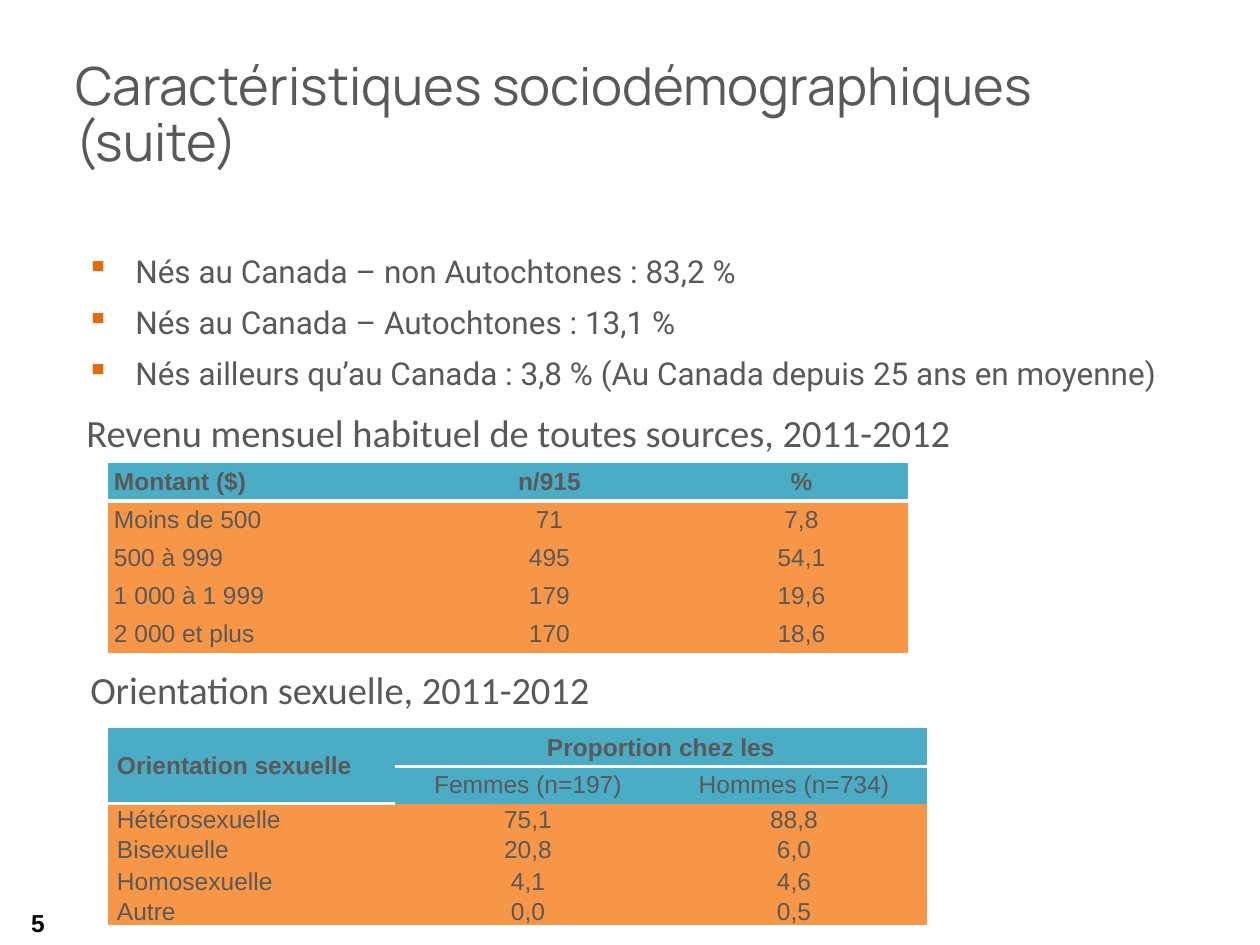
"""Build the slide on sociodemographic traits, with two tables."""
import pptx
import pptx.dml.color
import pptx.enum.text
import pptx.oxml
import pptx.oxml.ns
import pptx.util

PX = 914400 // 126
HUES = {"text": "595959", "num": "000000", "mark": "E46C0A",
        "head": "4BACC6", "body": "F79646", "line": "FFFFFF"}
ALIGN = pptx.enum.text.PP_ALIGN
ANCHOR = pptx.enum.text.MSO_ANCHOR
NO_GRID = "{2D5ABB26-0587-4C30-8999-92F81FD0307C}"

BIRTH = ["Nés au Canada – non Autochtones : 83,2 %",
         "Nés au Canada – Autochtones : 13,1 %",
         "Nés ailleurs qu’au Canada : 3,8 % (Au Canada depuis 25 ans en moyenne)"]
TEXTS = [
    {"box": (0, 898, 57, 50), "lines": ["5"], "anchor": ANCHOR.MIDDLE,
     "font": {"name": "Arial", "size": 14, "bold": True}, "hue": "num",
     "para": {"alignment": ALIGN.RIGHT}},
    {"box": (63, 38, 1134, 157), "anchor": ANCHOR.MIDDLE,
     "lines": ["Caractéristiques sociodémographiques (suite)"],
     "font": {"name": "Manrope", "size": 30}, "para": {"line_spacing": 0.9}},
    {"box": (74, 253, 1138, 160), "lines": BIRTH, "bullet": "▪",
     "font": {"name": "Roboto", "size": 18},
     "para": {"line_spacing": 0.8, "space_after": pptx.util.Pt(12)}},
    {"box": (74, 403, 900, 59), "wrap": False,
     "lines": ["Revenu mensuel habituel de toutes sources, 2011-2012"],
     "font": {"name": "Calibri", "size": 22}},
    {"box": (78, 660, 530, 59), "wrap": False,
     "lines": ["Orientation sexuelle, 2011-2012"],
     "font": {"name": "Calibri", "size": 22}},
]
TABLES = [
    {"at": (108, 463), "cols": [296, 291, 213], "rows": [38] * 5,
     "heads": 1, "inset": (6, 4), "anchor": ANCHOR.MIDDLE,
     "spans": [], "rules": [(0, 0), (0, 1), (0, 2)],
     "cells": [["Montant ($)", "n/915", "%"],
               ["Moins de 500", "71", "7,8"],
               ["500 à 999", "495", "54,1"],
               ["1 000 à 1 999", "179", "19,6"],
               ["2 000 et plus", "170", "18,6"]]},
    {"at": (108, 728), "cols": [287, 266, 266],
     "rows": [39, 37, 30, 30, 32, 29],
     "heads": 2, "inset": (9, 0), "anchor": ANCHOR.BOTTOM,
     "spans": [((0, 0), (1, 0)), ((0, 1), (0, 2))],
     "rules": [(0, 0), (1, 0), (0, 1), (0, 2)],
     "cells": [["Orientation sexuelle", "Proportion chez les", ""],
               ["", "Femmes (n=197)", "Hommes (n=734)"],
               ["Hétérosexuelle", "75,1", "88,8"],
               ["Bisexuelle", "20,8", "6,0"],
               ["Homosexuelle", "4,1", "4,6"],
               ["Autre", "0,0", "0,5"]]},
]


def color(key):
    return pptx.dml.color.RGBColor.from_string(HUES[key])


def xml(tag, body):
    return pptx.oxml.parse_xml(
        f"<a:{tag} {pptx.oxml.ns.nsdecls('a')} {body}</a:{tag.split()[0]}>")


def assign(item, values):
    for key, value in values.items():
        setattr(item, key, value)


def style(para, font, hue="text"):
    assign(para.font, {**font, "size": pptx.util.Pt(font["size"])})
    para.font.color.rgb = color(hue)


def mark(para, char):
    props = para._p.get_or_add_pPr()
    props.set("marL", str(49 * PX))
    props.set("indent", str(-49 * PX))
    props.append(xml("buClr", f'><a:srgbClr val="{HUES["mark"]}"/>'))
    props.append(xml("buChar", f'char="{char}">'))


def add_text(slide, item):
    frame = slide.shapes.add_textbox(*(n * PX for n in item["box"])).text_frame
    assign(frame, {"word_wrap": item.get("wrap", True),
                   "vertical_anchor": item.get("anchor", ANCHOR.TOP),
                   "text": "\n".join(item["lines"])})
    for para in frame.paragraphs:
        if "bullet" in item:
            mark(para, item["bullet"])
        assign(para, item.get("para", {}))
        style(para, item["font"], item.get("hue", "text"))


def fill_cell(cell, row, col, item):
    head = row < item["heads"]
    side, edge = item["inset"]
    edge = 0 if head else edge
    assign(cell, {"text": item["cells"][row][col],
                  "margin_left": side * PX, "margin_right": side * PX,
                  "margin_top": edge * PX, "margin_bottom": edge * PX,
                  "vertical_anchor": ANCHOR.MIDDLE if head else item["anchor"]})
    cell.fill.solid()
    cell.fill.fore_color.rgb = color("head" if head else "body")
    if (row, col) in item["rules"]:
        cell._tc.get_or_add_tcPr().insert(0, xml(
            "lnB", 'w="25400"><a:solidFill>'
            f'<a:srgbClr val="{HUES["line"]}"/></a:solidFill>'))
    para = cell.text_frame.paragraphs[0]
    para.alignment = ALIGN.CENTER if col else ALIGN.LEFT
    style(para, {"name": "Arial", "size": 14, "bold": row == 0})


def add_grid(slide, item):
    cols, rows = item["cols"], item["rows"]
    box = (*item["at"], sum(cols), sum(rows))
    table = slide.shapes.add_table(
        len(rows), len(cols), *(n * PX for n in box)).table
    assign(table, {"first_row": False, "horz_banding": False})
    table._tbl.tblPr.find(pptx.oxml.ns.qn("a:tableStyleId")).text = NO_GRID
    for col, width in enumerate(cols):
        table.columns[col].width = width * PX
    for row, height in enumerate(rows):
        table.rows[row].height = height * PX
        for col in range(len(cols)):
            fill_cell(table.cell(row, col), row, col, item)
    for first, last in item["spans"]:
        table.cell(*first).merge(table.cell(*last))


def main():
    deck = pptx.Presentation()
    assign(deck, {"slide_width": pptx.util.Inches(10),
                  "slide_height": pptx.util.Inches(7.5)})
    slide = deck.slides.add_slide(deck.slide_layouts[6])
    for item in TEXTS:
        add_text(slide, item)
    for item in TABLES:
        add_grid(slide, item)
    deck.save("out.pptx")


if __name__ == "__main__":
    main()
